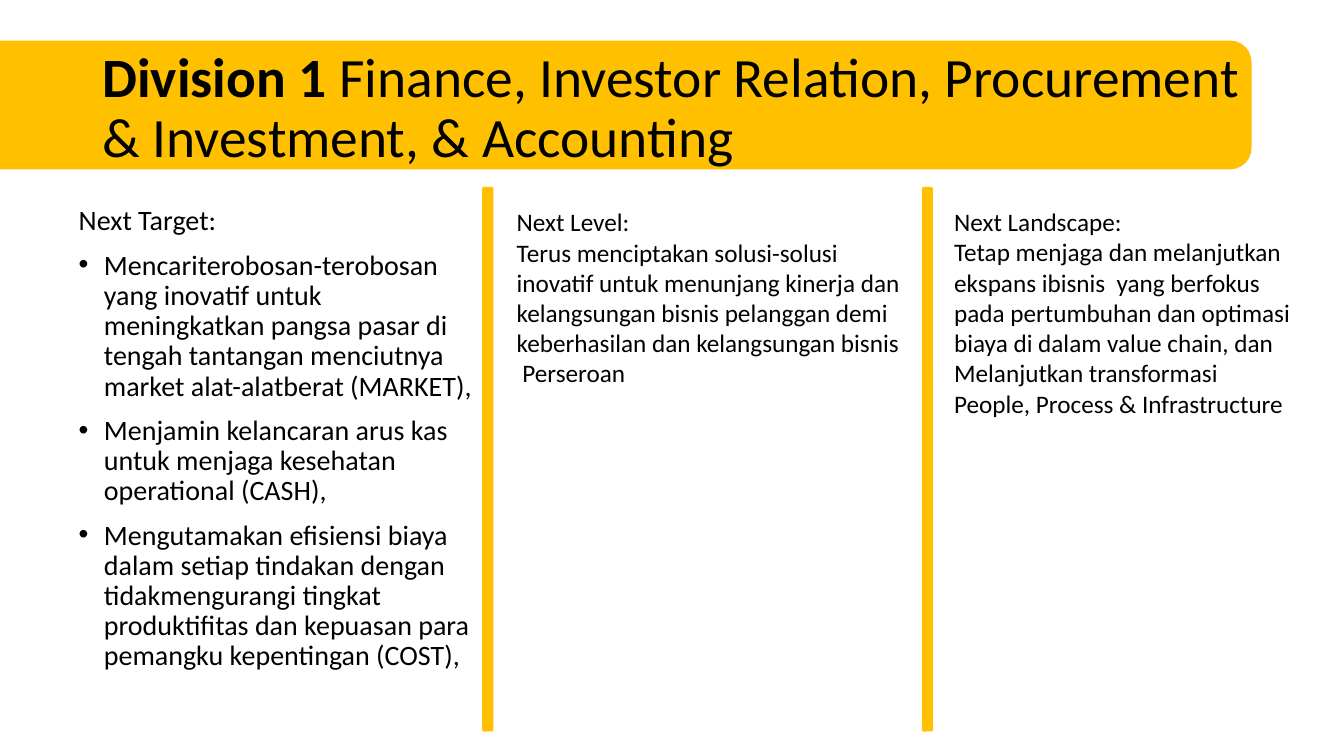
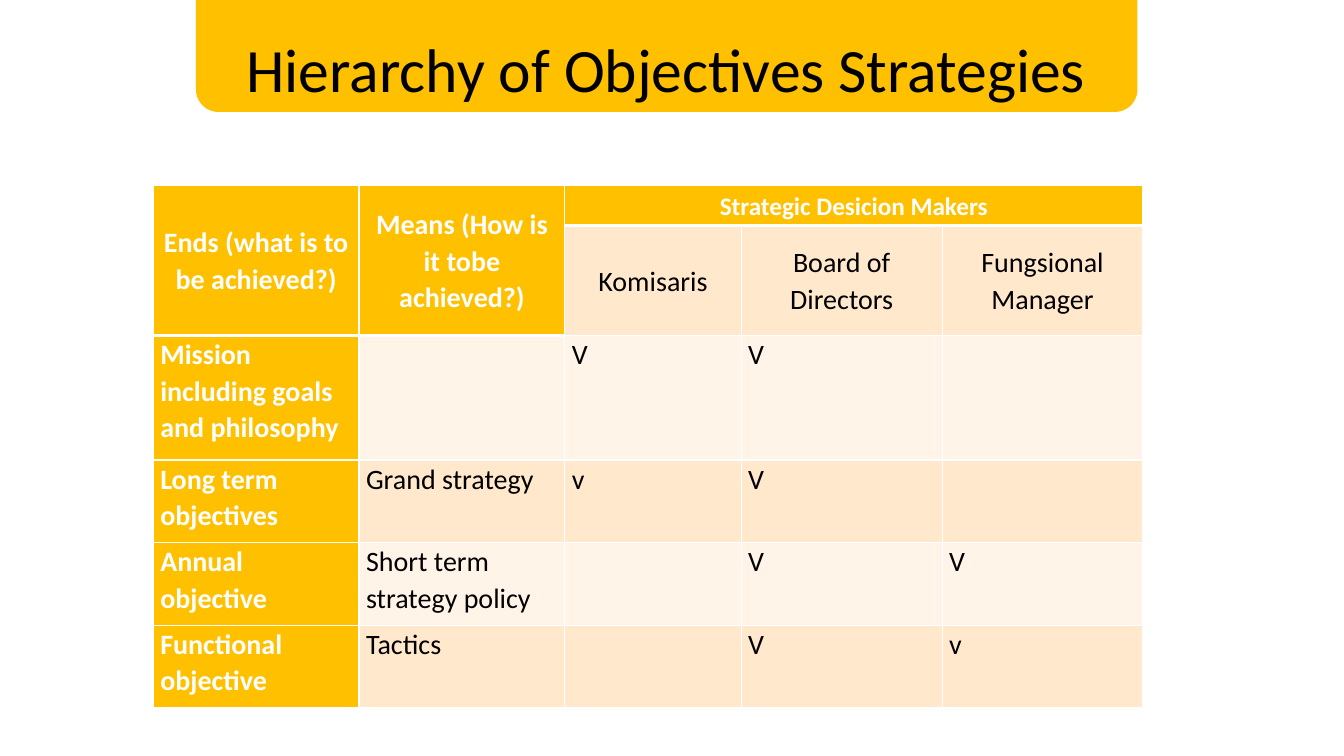
from dataclasses import dataclass

from lxml.etree import SubElement
from pptx import Presentation
from pptx.dml.color import RGBColor as Rgb
from pptx.enum.shapes import MSO_SHAPE as Shape
from pptx.enum.text import MSO_ANCHOR as Anchor, MSO_AUTO_SIZE as Fit, PP_ALIGN as Align
from pptx.oxml.ns import qn
from pptx.util import Pt


@dataclass(frozen=True)
class Theme:
    font: str = "Calibri"
    gold: str = "FFC000"
    peach: str = "FFE8CC"
    cream: str = "FFF4E7"
    white: str = "FFFFFF"
    black: str = "000000"
    title: float = 44
    long_title: float = 39.6
    body: float = 20
    note: float = 18
    thin: float = 1
    thick: float = 3


class Deck:
    def __init__(self, theme):
        self.theme = theme
        self.prs = Presentation()
        self.prs.slide_width, self.prs.slide_height = Pt(960), Pt(540)
        self.slide = None

    def add(self, layout):
        self.slide = self.prs.slides.add_slide(self.prs.slide_layouts[layout])

    def place(self, shape, box):
        shape.left, shape.top, shape.width, shape.height = map(Pt, box)

    def style(self, para, size, color=None, bold=None):
        font = para.font
        font.name, font.size, font.bold = self.theme.font, Pt(size), bold
        font.color.rgb = Rgb.from_string(color or self.theme.black)

    def bar(self, box):
        bar = self.slide.shapes.add_shape(Shape.ROUNDED_RECTANGLE, *map(Pt, box))
        bar.shadow.inherit = False
        bar.fill.solid()
        bar.fill.fore_color.rgb = Rgb.from_string(self.theme.gold)
        bar.line.fill.background()
        return bar

    def title(self, box, band, size, align, *runs):
        """Each run is a pair of text and bold; the band lies behind."""
        title = self.slide.shapes.title
        title.element.addprevious(self.bar(band).element)
        self.place(title, box)
        frame = title.text_frame
        frame.auto_size, frame.vertical_anchor = Fit.NONE, Anchor.MIDDLE
        para = frame.paragraphs[0]
        para.alignment, para.line_spacing = align, 0.9
        self.style(para, size)
        for text, bold in runs:
            run = para.add_run()
            run.text, run.font.bold = text, bold

    def body(self, box, head, items):
        """A plain heading line followed by bullets."""
        body = self.slide.placeholders[1]
        self.place(body, box)
        frame = body.text_frame
        frame.auto_size = Fit.NONE
        frame.text = "\n".join([head, *items])
        for num, para in enumerate(frame.paragraphs):
            para.line_spacing, para.space_before = 0.9, Pt(10)
            props = para._p.get_or_add_pPr()
            dent = Pt(18) if num else 0
            props.set("marL", str(dent))
            props.set("indent", str(-dent))
            if num:
                SubElement(props, qn("a:buChar"), char="•")
            else:
                SubElement(props, qn("a:buNone"))
            self.style(para, self.theme.body)

    def note(self, box, *lines):
        frame = self.slide.shapes.add_textbox(*map(Pt, box)).text_frame
        frame.word_wrap, frame.auto_size = True, Fit.SHAPE_TO_FIT_TEXT
        frame.text = "\n".join(lines)
        for para in frame.paragraphs:
            self.style(para, self.theme.note)

    def table(self, spot, cols, rows, data, spans):
        box = (*spot, sum(cols), sum(rows))
        grid = self.slide.shapes.add_table(len(rows), len(cols), *map(Pt, box)).table
        grid.first_row = grid.horz_banding = False
        for col, width in zip(grid.columns, cols):
            col.width = Pt(width)
        for row, height in zip(grid.rows, rows):
            row.height = Pt(height)
        for r, line in enumerate(data):
            for c, text in enumerate(line):
                self.cell(grid.cell(r, c), r, c, text)
        for first, last in spans:
            grid.cell(*first).merge(grid.cell(*last))

    def cell(self, cell, r, c, text):
        theme = self.theme
        key = r == 0 or c == 0 or (r == 1 and c == 1)
        fill = theme.gold if key else theme.peach if r % 2 else theme.cream
        cell.margin_left = cell.margin_right = Pt(5)
        cell.margin_top = cell.margin_bottom = 0
        self.edges(cell, r, c)
        cell.fill.solid()
        cell.fill.fore_color.rgb = Rgb.from_string(fill)
        cell.text = text
        para = cell.text_frame.paragraphs[0]
        para.line_spacing = 1.07
        if r < 2:
            cell.vertical_anchor, para.alignment = Anchor.MIDDLE, Align.CENTER
        size = theme.note if r == 0 and c > 1 else theme.body
        self.style(para, size, theme.white if key else theme.black, key)

    def edges(self, cell, r, c):
        """White borders, thick below the header cells."""
        def below(row):
            head = row == 0 or (row == 1 and c < 2)
            return self.theme.thick if head else self.theme.thin

        thin = self.theme.thin
        props = cell._tc.get_or_add_tcPr()
        for side, width in zip("LRTB", (thin, thin, below(r - 1), below(r))):
            line = SubElement(props, qn(f"a:ln{side}"), w=str(Pt(width)))
            fill = SubElement(line, qn("a:solidFill"))
            SubElement(fill, qn("a:srgbClr"), val=self.theme.white)


def finance(deck):
    deck.add(1)
    deck.title((66, 26, 828, 104), (-18, 29, 912, 92), deck.theme.long_title, Align.LEFT,
               ("Division 1 ", True),
               ("Finance, Investor Relation, Procurement & Investment, & Accounting", False))
    deck.body((49, 144, 296, 343), "Next Target:", [
        "Mencariterobosan-terobosan yang inovatif untuk meningkatkan pangsa pasar "
        "di tengah tantangan menciutnya market alat-alatberat (MARKET),",
        "Menjamin kelancaran arus kas untuk menjaga kesehatan operational (CASH),",
        "Mengutamakan efisiensi biaya dalam setiap tindakan dengan tidakmengurangi "
        "tingkat produktifitas dan kepuasan para pemangku kepentingan (COST),",
    ])
    deck.note((362, 144, 290, 181), "Next Level:",
              "Terus menciptakan solusi-solusi inovatif untuk menunjang kinerja dan "
              "kelangsungan bisnis pelanggan demi keberhasilan dan kelangsungan "
              "bisnis  Perseroan")
    deck.note((674.5, 144, 258, 160), "Next Landscape:",
              "Tetap menjaga dan melanjutkan ekspans ibisnis  yang berfokus pada "
              "pertumbuhan dan optimasi biaya di dalam value chain, dan Melanjutkan "
              "transformasi People, Process & Infrastructure")
    for left in (344.5, 658.5):
        deck.bar((left, 133.5, 8, 389))


def strategy(deck):
    deck.add(5)
    deck.title((62, 0, 828, 104), (140, -16.5, 672.5, 96.5), deck.theme.title, Align.CENTER,
               ("Hierarchy of Objectives Strategies", False))
    data = [
        ("Ends (what is to be achieved?)", "Means (How is it tobe achieved?)",
         "Strategic Desicion Makers", "", ""),
        ("", "", "Komisaris", "Board of Directors", "Fungsional Manager"),
        ("Mission including goals and philosophy", "", "V", "V", ""),
        ("Long term objectives", "Grand strategy", "v", "V", ""),
        ("Annual objective", "Short term strategy policy", "", "V", "V"),
        ("Functional objective", "Tactics", "", "V", "v"),
    ]
    spans = [((0, 0), (1, 0)), ((0, 1), (1, 1)), ((0, 2), (0, 4))]
    deck.table((109.5, 132.5), (147, 147, 126, 143.5, 143.5),
               (28.5, 78.5, 89, 59, 59, 59), data, spans)


def main():
    deck = Deck(Theme())
    finance(deck)
    strategy(deck)
    deck.prs.save("out.pptx")


if __name__ == "__main__":
    main()
